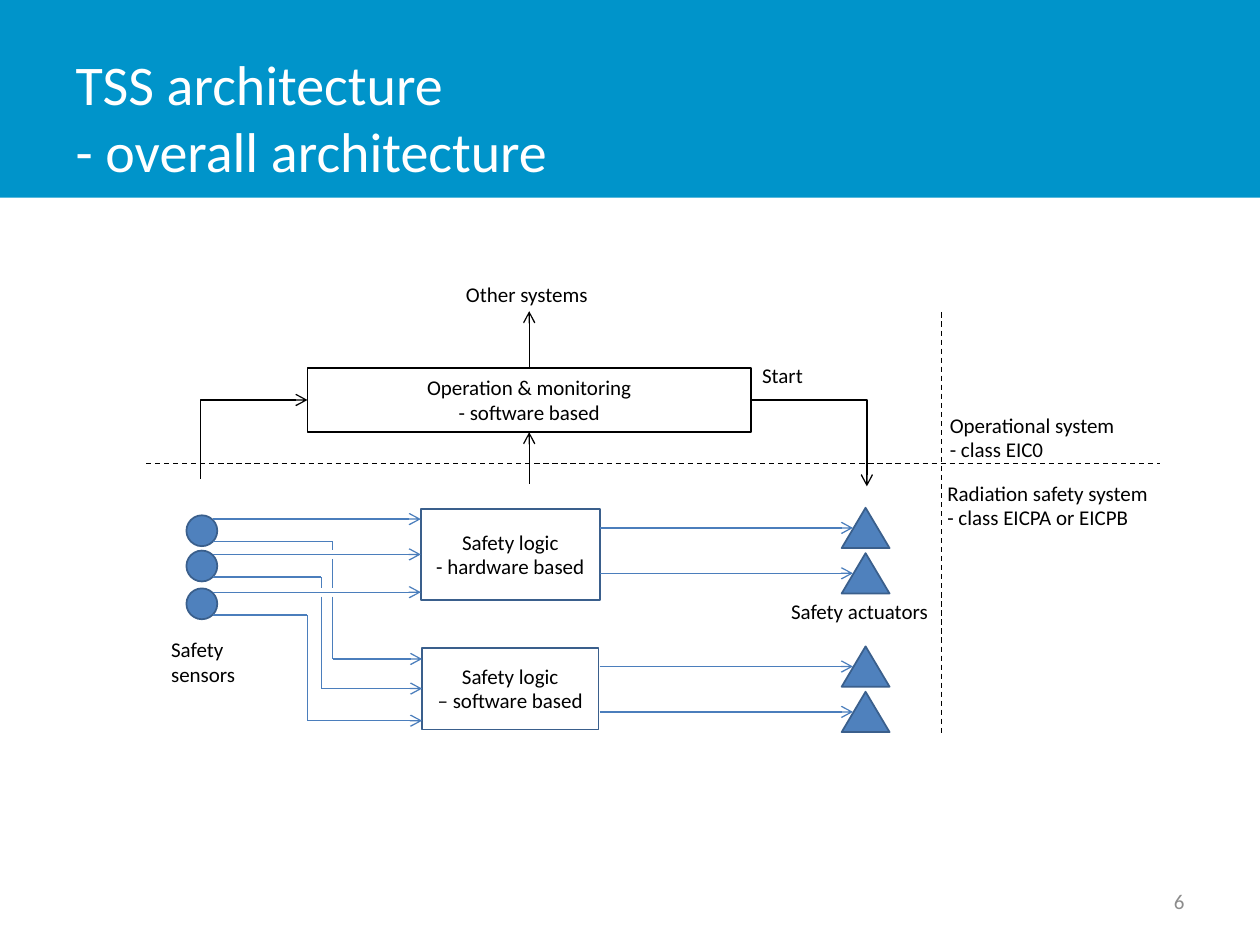
from dataclasses import dataclass
from typing import NamedTuple, Optional

from lxml.etree import SubElement
from pptx import Presentation
from pptx.dml.color import RGBColor
from pptx.enum.dml import MSO_LINE
from pptx.enum.shapes import MSO_CONNECTOR as Link, MSO_SHAPE as Preset
from pptx.enum.text import MSO_ANCHOR as Anchor, PP_ALIGN as Align
from pptx.oxml.ns import qn
from pptx.util import Inches, Pt


@dataclass(frozen=True)
class Theme:
    font: str = "Calibri"
    title_size: int = 32
    text_size: int = 12
    leading: int = 14
    band: str = "0094CA"
    white: str = "FFFFFF"
    ink: str = "000000"
    number: str = "8C8C8C"
    fill: str = "4F81BD"
    outline: str = "3A5F8C"
    wire: str = "4B7EBC"


class Area(NamedTuple):
    """Left, top, width and height in grid cells."""
    x: float
    y: float
    w: float
    h: float


class Point(NamedTuple):
    x: float
    y: float


class Label(NamedTuple):
    text: str
    area: Area


class Lane(NamedTuple):
    """Route of one sensor to the hardware logic and, by a lane, to the software logic."""
    sensor_top: float
    lane_x: float
    software_y: float


THEME = Theme()
COLUMNS, ROWS = 100, 75
CELL = Inches(0.1)
TOP, LEFT, BOTTOM = 0, 1, 2  # connection sites

LABELS = [
    Label("Safety sensors", Area(12.6, 50.1, 11.4, 4.6)),
    Label("Safety actuators", Area(61.8, 47.1, 13.4, 4.6)),
    Label("Other systems", Area(36, 21.9, 14.7, 4.6)),
    Label("Start", Area(59.5, 28.3, 11.6, 4.6)),
    Label("Radiation safety system\n- class EICPA or EICPB", Area(74.2, 37.7, 20.3, 5.4)),
    Label("Operational system\n- class EIC0", Area(74.4, 32.3, 20.3, 6)),
]
OPERATION = Label("Operation & monitoring\n- software based", Area(24.4, 29.2, 35.2, 5.1))
HARDWARE = Label("Safety logic\n- hardware based", Area(33.4, 40.4, 14.2, 7.2))
SOFTWARE = Label("Safety logic\n– software based", Area(33.5, 51.4, 14, 6.5))

LANES = [Lane(40.9, 26.4, 52.3), Lane(43.7, 25.5, 54.65), Lane(46.7, 24.4, 57.2)]
SENSOR_X, SENSOR_SIZE, WIRE_START = 14.8, 2.45, 16.9
DIRECT_DROP, LANE_DROP = 0.3, 2.1  # wire exits below the top of a sensor
CROSSING_GAP = 0.35
ACTUATOR_TOPS = [40.3, 43.9, 51.3, 54.9]
ACTUATOR_X, ACTUATOR_W, ACTUATOR_H = 66.8, 3.8, 3.2


def cells(*values: float) -> list[int]:
    return [round(value * CELL) for value in values]


def rgb(value: str) -> RGBColor:
    return RGBColor.from_string(value)


def write(frame, text: str, size: int, color: str, align=Align.LEFT,
          anchor=Anchor.TOP, leading: Optional[int] = None) -> None:
    frame.word_wrap = True
    frame.vertical_anchor = anchor
    paragraph = frame.paragraphs[0]
    paragraph.text = text
    paragraph.alignment = align
    if leading:
        paragraph.line_spacing = Pt(leading)
        paragraph.space_after = Pt(12)
    for run in paragraph.runs:
        run.font.name = THEME.font
        run.font.size = Pt(size)
        run.font.color.rgb = rgb(color)


def add_label(slide, label: Label) -> None:
    box = slide.shapes.add_textbox(*cells(*label.area))
    write(box.text_frame, label.text, THEME.text_size, THEME.ink, leading=THEME.leading)


def add_figure(slide, preset, area: Area, fill: Optional[str], outline: Optional[str]):
    figure = slide.shapes.add_shape(preset, *cells(*area))
    figure.shadow.inherit = False
    if fill:
        figure.fill.solid()
        figure.fill.fore_color.rgb = rgb(fill)
    else:
        figure.fill.background()
    if outline:
        figure.line.color.rgb = rgb(outline)
        figure.line.width = Pt(1)
    else:
        figure.line.fill.background()
    return figure


def add_block(slide, block: Label, outline: str):
    figure = add_figure(slide, Preset.RECTANGLE, block.area, None, outline)
    write(figure.text_frame, block.text, THEME.text_size, THEME.ink,
          Align.CENTER, Anchor.MIDDLE, THEME.leading)
    return figure


def add_line(slide, start: Point, end: Point, color: str, arrow: bool = False,
             dashed: bool = False, bend: Optional[int] = None):
    """Draw a straight line, or an elbow whose middle leg lies at bend percent of its width."""
    kind = Link.STRAIGHT if bend is None else Link.ELBOW
    line = slide.shapes.add_connector(kind, *cells(*start, *end))
    line.line.color.rgb = rgb(color)
    line.line.width = Pt(0.75)
    if dashed:
        line.line.dash_style = MSO_LINE.DASH
    properties = line._element.spPr
    if arrow:
        SubElement(properties.find(qn("a:ln")), qn("a:tailEnd"), type="arrow")
    if bend is not None:
        guides = properties.find(qn("a:prstGeom")).find(qn("a:avLst"))
        SubElement(guides, qn("a:gd"), name="adj1", fmla=f"val {bend * 1000}")
    SubElement(properties, qn("a:effectLst"))
    return line


def add_sensor(slide, lane: Lane, direct_ys: list[float], hardware, software) -> None:
    area = Area(SENSOR_X, lane.sensor_top, SENSOR_SIZE, SENSOR_SIZE)
    add_figure(slide, Preset.OVAL, area, THEME.fill, THEME.outline)

    direct_y = lane.sensor_top + DIRECT_DROP
    direct = add_line(slide, Point(WIRE_START, direct_y),
                      Point(HARDWARE.area.x, direct_y), THEME.wire, arrow=True)
    if lane is LANES[1]:
        direct.end_connect(hardware, LEFT)

    y = lane.sensor_top + LANE_DROP
    add_line(slide, Point(WIRE_START, y), Point(lane.lane_x, y), THEME.wire)
    for crossing in [other for other in direct_ys if other > y]:
        add_line(slide, Point(lane.lane_x, y),
                 Point(lane.lane_x, crossing - CROSSING_GAP), THEME.wire)
        y = crossing + CROSSING_GAP
    add_line(slide, Point(lane.lane_x, y), Point(lane.lane_x, lane.software_y), THEME.wire)
    entry = add_line(slide, Point(lane.lane_x, lane.software_y),
                     Point(SOFTWARE.area.x, lane.software_y), THEME.wire, arrow=True)
    if lane is LANES[1]:
        entry.end_connect(software, LEFT)


def add_actuator(slide, top: float) -> None:
    area = Area(ACTUATOR_X, top, ACTUATOR_W, ACTUATOR_H)
    add_figure(slide, Preset.ISOSCELES_TRIANGLE, area, THEME.fill, THEME.outline)
    y = top + ACTUATOR_H / 2
    add_line(slide, Point(47.6, y), Point(67.7, y), THEME.wire, arrow=True)


def add_heading(slide) -> None:
    title = slide.shapes.title
    title.left, title.top, title.width, title.height = cells(5, 3, 78.1, 12.5)
    write(title.text_frame, "TSS architecture\n- overall architecture",
          THEME.title_size, THEME.white, anchor=Anchor.MIDDLE)
    band = add_figure(slide, Preset.RECTANGLE, Area(0, 0, COLUMNS, 15.7), THEME.band, None)
    title._element.addprevious(band._element)


def main() -> None:
    deck = Presentation()
    deck.slide_width, deck.slide_height = cells(COLUMNS, ROWS)
    slide = deck.slides.add_slide(deck.slide_layouts[5])
    add_heading(slide)
    number = slide.shapes.add_textbox(*cells(71.7, 69.5, 23.3, 4))
    write(number.text_frame, "6", THEME.text_size, THEME.number, Align.RIGHT, Anchor.MIDDLE)

    hardware = add_block(slide, HARDWARE, THEME.outline)
    software = add_block(slide, SOFTWARE, THEME.outline)
    operation = add_block(slide, OPERATION, THEME.ink)
    direct_ys = [lane.sensor_top + DIRECT_DROP for lane in LANES]
    for lane in LANES:
        add_sensor(slide, lane, direct_ys, hardware, software)
    for top in ACTUATOR_TOPS:
        add_actuator(slide, top)

    add_line(slide, Point(15.9, 38), Point(24.4, 31.75), THEME.ink, arrow=True, bend=0)
    add_line(slide, Point(59.6, 31.75), Point(68.8, 38.6), THEME.ink, arrow=True, bend=100)
    to_others = add_line(slide, Point(42, 29.2), Point(42, 24.7), THEME.ink, arrow=True)
    to_others.begin_connect(operation, TOP)
    from_safety = add_line(slide, Point(42, 38.4), Point(42, 34.3), THEME.ink, arrow=True)
    from_safety.end_connect(operation, BOTTOM)
    add_line(slide, Point(11.6, 36.8), Point(92.1, 36.8), THEME.ink, dashed=True)
    add_line(slide, Point(74.7, 24.8), Point(74.7, 58.3), THEME.ink, dashed=True)
    for label in LABELS:
        add_label(slide, label)
    deck.save("out.pptx")


if __name__ == "__main__":
    main()
